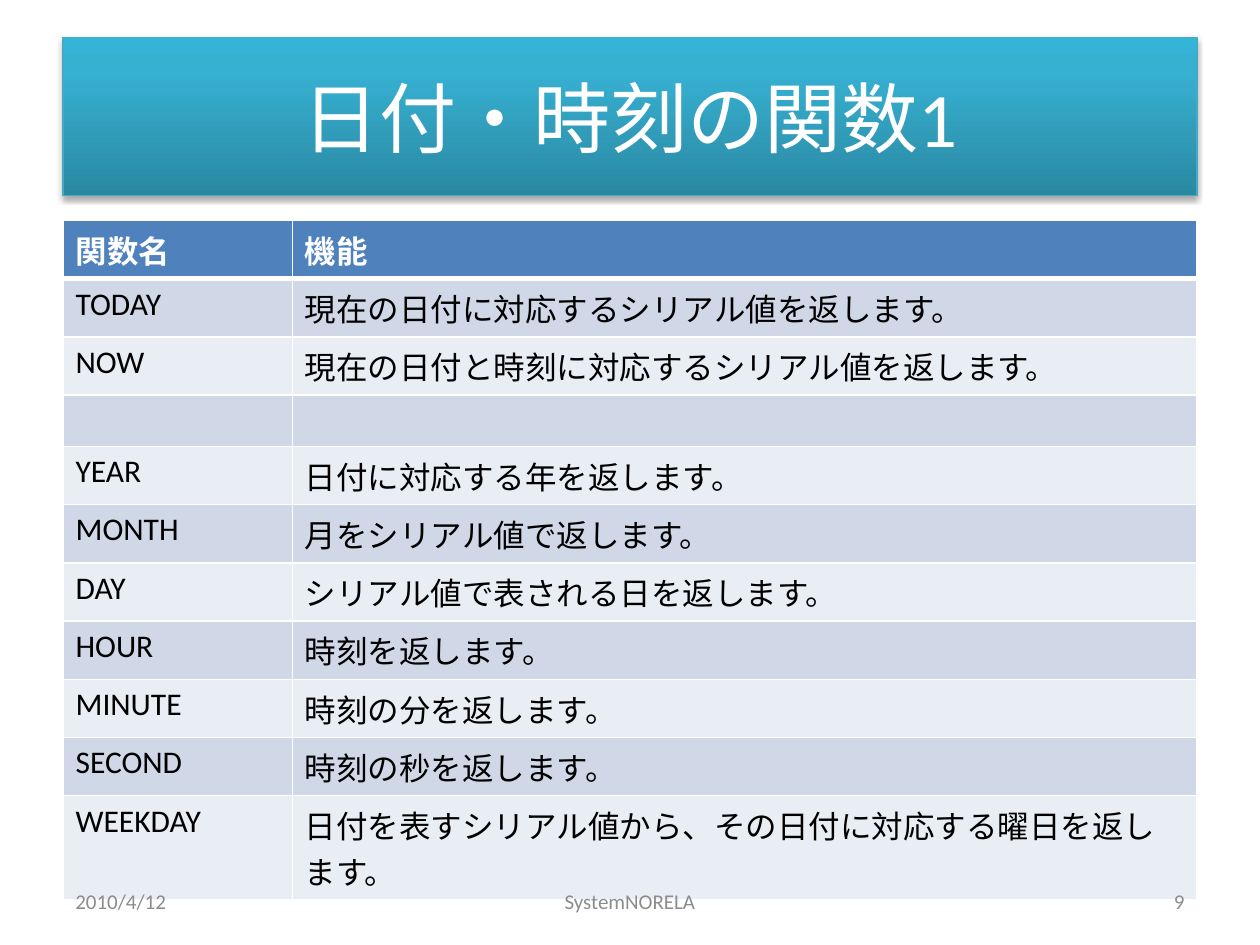
from copy import deepcopy
from lxml.etree import SubElement as Sub
from pptx import Presentation
from pptx.dml.color import RGBColor
from pptx.enum.shapes import MSO_SHAPE as Shape
from pptx.enum.text import MSO_ANCHOR as Anchor, PP_ALIGN as Align
from pptx.oxml.ns import qn
from pptx.util import Inches, Pt

WHITE = RGBColor(0xFF, 0xFF, 0xFF)
BLACK = RGBColor(0, 0, 0)
GREY = RGBColor(0x8C, 0x8C, 0x8C)
DEEP = RGBColor(0x2A, 0x88, 0xA2)
TEAL = RGBColor(0x37, 0xB1, 0xD2)
LIGHT = RGBColor(0x34, 0xB4, 0xD6)
EDGE = RGBColor(0x46, 0xAA, 0xC5)
HEAD = RGBColor(0x4F, 0x81, 0xBD)
BANDS = [RGBColor(0xE9, 0xED, 0xF4), RGBColor(0xD0, 0xD8, 0xE8)]

ROWS = [
    ("関数名", "機能"),
    ("TODAY", "現在の日付に対応するシリアル値を返します。"),
    ("NOW", "現在の日付と時刻に対応するシリアル値を返します。"),
    ("", ""),
    ("YEAR", "日付に対応する年を返します。"),
    ("MONTH", "月をシリアル値で返します。"),
    ("DAY", "シリアル値で表される日を返します。"),
    ("HOUR", "時刻を返します。"),
    ("MINUTE", "時刻の分を返します。"),
    ("SECOND", "時刻の秒を返します。"),
    ("WEEKDAY", "日付を表すシリアル値から、その日付に対応する曜日を返します。"),
]


def write(frame, text, size, color, align=Align.LEFT, bold=False):
    para = frame.paragraphs[0]
    para.alignment = align
    run = para.add_run()
    run.text = text
    font = run.font
    font.name, font.size, font.bold = "Calibri", Pt(size), bold
    font.color.rgb = color


def shade(shape):
    shape.shadow.inherit = False
    effects = shape.element.spPr.find(qn("a:effectLst"))
    shadow = Sub(effects, qn("a:outerShdw"), blurRad=str(Pt(3.1)),
                 dist=str(Pt(1.8)), dir="5400000", rotWithShape="0")
    color = Sub(shadow, qn("a:srgbClr"), val="000000")
    Sub(color, qn("a:alpha"), val="35000")


def add_title(slide, box, text):
    bar = slide.shapes.add_shape(Shape.RECTANGLE, *map(Inches, box))
    bar.fill.gradient()
    bar.fill.gradient_angle = 90
    stops = bar.element.spPr.find(qn("a:gradFill")).find(qn("a:gsLst"))
    stops.insert(1, deepcopy(stops[0]))
    marks = [(0, DEEP), (0.8, TEAL), (1, LIGHT)]
    for stop, (place, color) in zip(bar.fill.gradient_stops, marks):
        stop.position = place
        stop.color.rgb = color
    bar.line.color.rgb = EDGE
    bar.line.width = Pt(0.75)
    shade(bar)
    frame = bar.text_frame
    frame.word_wrap = True
    frame.vertical_anchor = Anchor.MIDDLE
    write(frame, text, 44, WHITE, Align.CENTER)


def add_edge(cell, side, width):
    props = cell._tc.get_or_add_tcPr()
    line = Sub(props, qn(f"a:ln{side}"), w=str(Pt(width)))
    fill = Sub(line, qn("a:solidFill"))
    Sub(fill, qn("a:srgbClr"), val=str(WHITE))


def add_grid(slide, box, widths, rows):
    table = slide.shapes.add_table(
        len(rows), len(widths), *map(Inches, box)).table
    for col, width in zip(table.columns, widths):
        col.width = Inches(width)
    for i, texts in enumerate(rows):
        table.rows[i].height = Inches(box[3] / len(rows))
        for j, text in enumerate(texts):
            cell = table.cell(i, j)
            top = i == 0
            for side in "LRTB":
                thick = (top and side == "B") or (i == 1 and side == "T")
                add_edge(cell, side, 3 if thick else 1)
            cell.fill.solid()
            cell.fill.fore_color.rgb = HEAD if top else BANDS[i % 2]
            if text:
                write(cell.text_frame, text, 18,
                      WHITE if top else BLACK, bold=top)


def add_foot(slide, box, parts):
    left, top, width, height = box
    places = [(left, 2.33), (left + (width - 3.17) / 2, 3.17),
              (left + width - 2.33, 2.33)]
    aligns = [Align.LEFT, Align.CENTER, Align.RIGHT]
    for (x, wide), align, text in zip(places, aligns, parts):
        note = slide.shapes.add_textbox(
            *map(Inches, (x, top, wide, height)))
        frame = note.text_frame
        frame.word_wrap = True
        frame.vertical_anchor = Anchor.MIDDLE
        write(frame, text, 12, GREY, align)


def main():
    deck = Presentation()
    deck.slide_width, deck.slide_height = Inches(10), Inches(7.5)
    slide = deck.slides.add_slide(deck.slide_layouts[6])
    add_title(slide, (0.5, 0.3, 9, 1.25), "日付・時刻の関数1")
    add_grid(slide, (0.5, 1.75, 9, 4.46), (1.82, 7.18), ROWS)
    add_foot(slide, (0.5, 6.95, 9, 0.4), ("2010/4/12", "SystemNORELA", "9"))
    deck.save("out.pptx")


if __name__ == "__main__":
    main()
